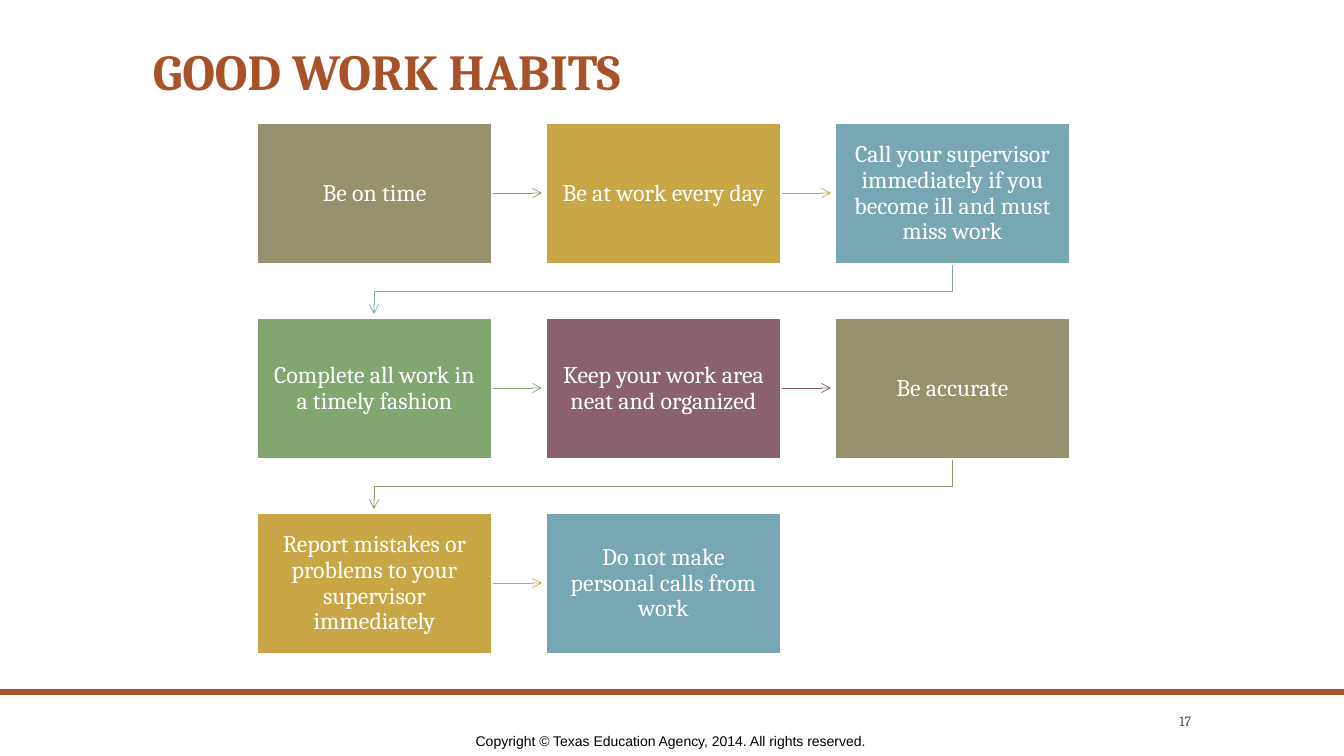
import pptx
import pptx.dml.color
import pptx.enum.shapes
import pptx.enum.text
import pptx.oxml
import pptx.oxml.ns
import pptx.util

TITLE = "GOOD WORK HABITS"
PAGE = "17"
RIGHTS = "Copyright © Texas Education Agency, 2014. All rights reserved."
HABITS = [
    "Be on time",
    "Be at work every day",
    "Call your supervisor immediately if you become ill and must miss work",
    "Complete all work in a timely fashion",
    "Keep your work area neat and organized",
    "Be accurate",
    "Report mistakes or problems to your supervisor immediately",
    "Do not make personal calls from work",
]
FILLS = ["98916E", "C9A645", "76A7B2", "82A670", "896170"]
RUST, WHITE, GREY, BLACK = "A85229", "FFFFFF", "514A40", "000000"
SERIF, SANS = "Cambria", "Arial"

# Lengths in px
WIDE, HIGH = 1344, 756
COLS = 3
LEFT, TOP = 257, 123
BOX_W, BOX_H = 235, 141
STEP_X, STEP_Y = 289, 195
TIP = 4  # space between an arrow tip and the next box
PAD = 13

ALIGN = pptx.enum.text.PP_ALIGN
ANCHOR = pptx.enum.text.MSO_ANCHOR
KIND = pptx.enum.shapes.MSO_SHAPE


def px(n):
    return pptx.util.Emu(round(n * 914400 / 100.8))


def rgb(code):
    return pptx.dml.color.RGBColor.from_string(code)


def write(shape, text, size, color, font=SERIF, bold=False, align=ALIGN.CENTER,
          anchor=ANCHOR.MIDDLE, wrap=True, lead=None):
    frame = shape.text_frame
    frame.word_wrap = wrap
    frame.vertical_anchor = anchor
    para = frame.paragraphs[0]
    para.alignment = align
    para.line_spacing = lead
    run = para.add_run()
    run.text = text
    run.font.name = font
    run.font.size = pptx.util.Pt(size)
    run.font.bold = bold
    run.font.color.rgb = rgb(color)


def label(slide, x, y, w, h, *args, **opts):
    box = slide.shapes.add_textbox(px(x), px(y), px(w), px(h))
    write(box, *args, **opts)


def block(slide, x, y, w, h, fill):
    shape = slide.shapes.add_shape(KIND.RECTANGLE, px(x), px(y), px(w), px(h))
    shape.shadow.inherit = False
    shape.fill.solid()
    shape.fill.fore_color.rgb = rgb(fill)
    shape.line.fill.background()
    return shape


def arrow(slide, points, color):
    """Straight connector for two points, open outline for more."""
    spots = [(px(x), px(y)) for x, y in points]
    if len(spots) == 2:
        shape = slide.shapes.add_connector(
            pptx.enum.shapes.MSO_CONNECTOR.STRAIGHT, *spots[0], *spots[1])
        props = shape.element.spPr
    else:
        path = slide.shapes.build_freeform(*spots[0])
        path.add_line_segments(spots[1:], close=False)
        shape = path.convert_to_shape()
        shape.fill.background()
        props = shape.element.spPr
    shape.line.color.rgb = rgb(color)
    shape.line.width = pptx.util.Pt(0.5)
    space = pptx.oxml.ns.nsdecls("a")
    line = shape.line._get_or_add_ln()
    line.append(pptx.oxml.parse_xml(f'<a:tailEnd {space} type="arrow"/>'))
    props.append(pptx.oxml.parse_xml(f"<a:effectLst {space}/>"))


def place(i):
    row, col = divmod(i, COLS)
    return LEFT + col * STEP_X, TOP + row * STEP_Y


def route(i):
    """Points from box i to the next box, across or down to a new row."""
    x, y = place(i)
    nx, ny = place(i + 1)
    if ny == y:
        mid = y + BOX_H // 2
        return [(x + BOX_W, mid), (nx - TIP, mid)]
    start, end = x + BOX_W // 2, nx + BOX_W // 2
    bend = (y + BOX_H + ny) // 2
    return [(start, y + BOX_H), (start, bend), (end, bend), (end, ny - TIP)]


def main():
    deck = pptx.Presentation()
    deck.slide_width, deck.slide_height = px(WIDE), px(HIGH)
    slide = deck.slides.add_slide(deck.slide_layouts[6])

    block(slide, 0, 689, WIDE, 6, RUST)
    label(slide, 143, 42, 1058, 126, TITLE, 36, RUST, bold=True,
          align=ALIGN.LEFT, anchor=ANCHOR.TOP, lead=0.9)

    for i, habit in enumerate(HABITS):
        fill = FILLS[i % len(FILLS)]
        if i + 1 < len(HABITS):
            arrow(slide, route(i), fill)
        box = block(slide, *place(i), BOX_W, BOX_H, fill)
        box.line.color.rgb = rgb(WHITE)
        box.line.width = pptx.util.Pt(1)
        frame = box.text_frame
        frame.margin_left = frame.margin_right = px(PAD)
        frame.margin_top = frame.margin_bottom = px(PAD)
        write(box, habit, 17, WHITE, lead=0.9)

    label(slide, 1124, 708, 77, 26, PAGE, 10, GREY, align=ALIGN.RIGHT)
    label(slide, 462, 728, 417, 27, RIGHTS, 10, BLACK, font=SANS,
          anchor=ANCHOR.TOP, wrap=False)
    deck.save("out.pptx")


if __name__ == "__main__":
    main()
